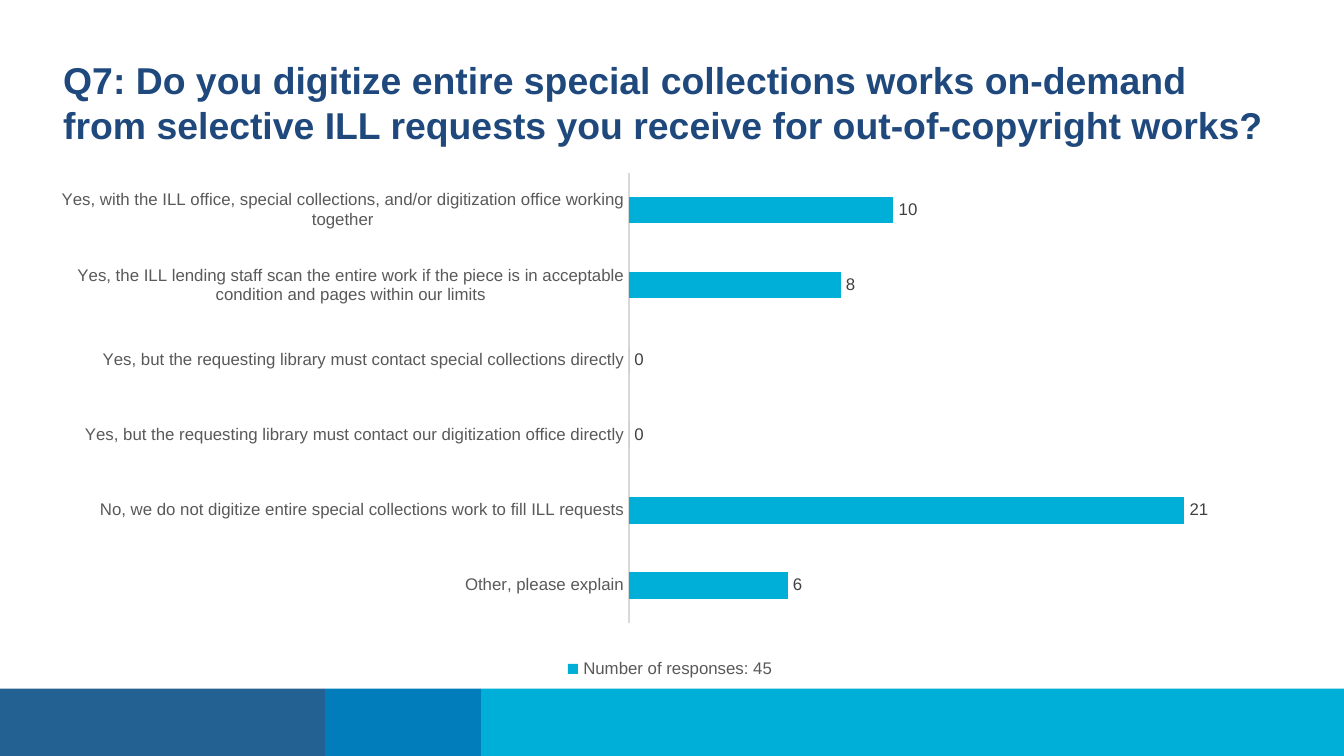
from lxml import etree
from pptx import Presentation
from pptx.chart.data import CategoryChartData
from pptx.dml.color import RGBColor
from pptx.enum.chart import XL_CHART_TYPE, XL_LABEL_POSITION, XL_LEGEND_POSITION, XL_TICK_LABEL_POSITION, XL_TICK_MARK
from pptx.enum.shapes import MSO_SHAPE
from pptx.enum.text import MSO_ANCHOR, MSO_AUTO_SIZE, PP_ALIGN
from pptx.oxml.ns import qn
from pptx.util import Inches, Pt

WIDTH = Inches(10)
HEIGHT = WIDTH * 9 // 16
COLORS = {
    "navy": "236192", "blue": "007DBA", "cyan": "00AFD7", "title": "1F497D",
    "label": "595959", "value": "404040", "axis": "D9D9D9", "black": "000000",
}
TITLE = (
    "Q7: Do you digitize entire special collections works on-demand "
    "from selective ILL requests you receive for out-of-copyright works?"
)
RESPONSES = {
    "Other, please explain": 6,
    "No, we do not digitize entire special collections work to fill ILL requests": 21,
    "Yes, but the requesting library must contact our digitization office directly": 0,
    "Yes, but the requesting library must contact special collections directly": 0,
    "Yes, the ILL lending staff scan the entire work if the piece is in acceptable "
    "condition and pages within our limits": 8,
    "Yes, with the ILL office, special collections, and/or digitization office "
    "working together": 10,
}
PLOT_LAYOUT = {
    "layoutTarget": "inner", "xMode": "edge", "yMode": "edge",
    "x": 0.467, "y": 0.039, "w": 0.533, "h": 0.846,
}


def color(name):
    return RGBColor.from_string(COLORS[name])


def set_all(target, values):
    for name, value in values.items():
        setattr(target, name, value)


def set_font(font, size, color_name, bold=False):
    set_all(font, {"name": "Arial", "size": Pt(size), "bold": bold})
    font.color.rgb = color(color_name)


def share(left, top, width, height):
    return (
        round(left * WIDTH), round(top * HEIGHT),
        round(width * WIDTH), round(height * HEIGHT),
    )


def add_footer(page, box):
    left, top, width, height = box
    for name, portion in (("navy", 0.242), ("blue", 0.116), ("cyan", 0.642)):
        band_width = round(width * portion)
        band = page.shapes.add_shape(MSO_SHAPE.RECTANGLE, left, top, band_width, height)
        band.shadow.inherit = False
        band.fill.solid()
        band.fill.fore_color.rgb = color(name)
        band.line.fill.background()
        left += band_width


def add_title(page, box):
    title = page.shapes.title
    set_all(title, dict(zip(("left", "top", "width", "height"), box)))
    frame = title.text_frame
    set_all(frame, {
        "word_wrap": True, "auto_size": MSO_AUTO_SIZE.NONE,
        "vertical_anchor": MSO_ANCHOR.MIDDLE,
        "margin_left": Inches(0.1), "margin_right": Inches(0.1),
        "margin_top": Inches(0.05), "margin_bottom": Inches(0.05),
    })
    para = frame.paragraphs[0]
    set_all(para, {"alignment": PP_ALIGN.LEFT, "space_before": Pt(4)})
    span = para.add_run()
    span.text = TITLE
    set_font(span.font, 20, "title", True)


def place_plot(chart):
    plot_area = chart._chartSpace.chart.plotArea
    for old in plot_area.findall(qn("c:layout")):
        plot_area.remove(old)
    layout = etree.Element(qn("c:layout"))
    manual = etree.SubElement(layout, qn("c:manualLayout"))
    for name, value in PLOT_LAYOUT.items():
        etree.SubElement(manual, qn(f"c:{name}")).set("val", str(value))
    plot_area.insert(0, layout)


def add_responses_chart(page, box):
    data = CategoryChartData()
    data.categories = list(RESPONSES)
    data.add_series("Number of responses: 45", list(RESPONSES.values()))
    chart = page.shapes.add_chart(XL_CHART_TYPE.BAR_CLUSTERED, *box, data).chart
    set_font(chart.font, 10, "black")
    set_all(chart, {"has_title": False, "has_legend": True})
    set_all(chart.legend, {"position": XL_LEGEND_POSITION.BOTTOM, "include_in_layout": False})
    set_font(chart.legend.font, 9, "label")

    categories = chart.category_axis
    set_all(categories, {
        "major_tick_mark": XL_TICK_MARK.NONE, "minor_tick_mark": XL_TICK_MARK.NONE,
        "tick_label_position": XL_TICK_LABEL_POSITION.NEXT_TO_AXIS,
        "has_major_gridlines": False,
    })
    set_font(categories.tick_labels.font, 9, "label")
    categories.format.line.width = Pt(0.75)
    categories.format.line.color.rgb = color("axis")
    set_all(chart.value_axis, {
        "visible": False, "has_major_gridlines": False,
        "minimum_scale": 0, "maximum_scale": 25,
    })

    plot = chart.plots[0]
    set_all(plot, {"gap_width": 182, "vary_by_categories": False})
    series = plot.series[0]
    series.format.fill.solid()
    series.format.fill.fore_color.rgb = color("cyan")
    labels = series.data_labels
    set_all(labels, {"show_value": True, "position": XL_LABEL_POSITION.OUTSIDE_END})
    set_font(labels.font, 9, "value")
    place_plot(chart)


def main():
    deck = Presentation()
    set_all(deck, {"slide_width": WIDTH, "slide_height": HEIGHT})
    page = deck.slides.add_slide(deck.slide_layouts[5])
    add_footer(page, share(0, 0.911, 1, 0.089))
    add_title(page, share(0.037, 0.068, 0.923, 0.133))
    add_responses_chart(page, share(0.037, 0.201, 0.923, 0.704))
    deck.save("out.pptx")


if __name__ == "__main__":
    main()
